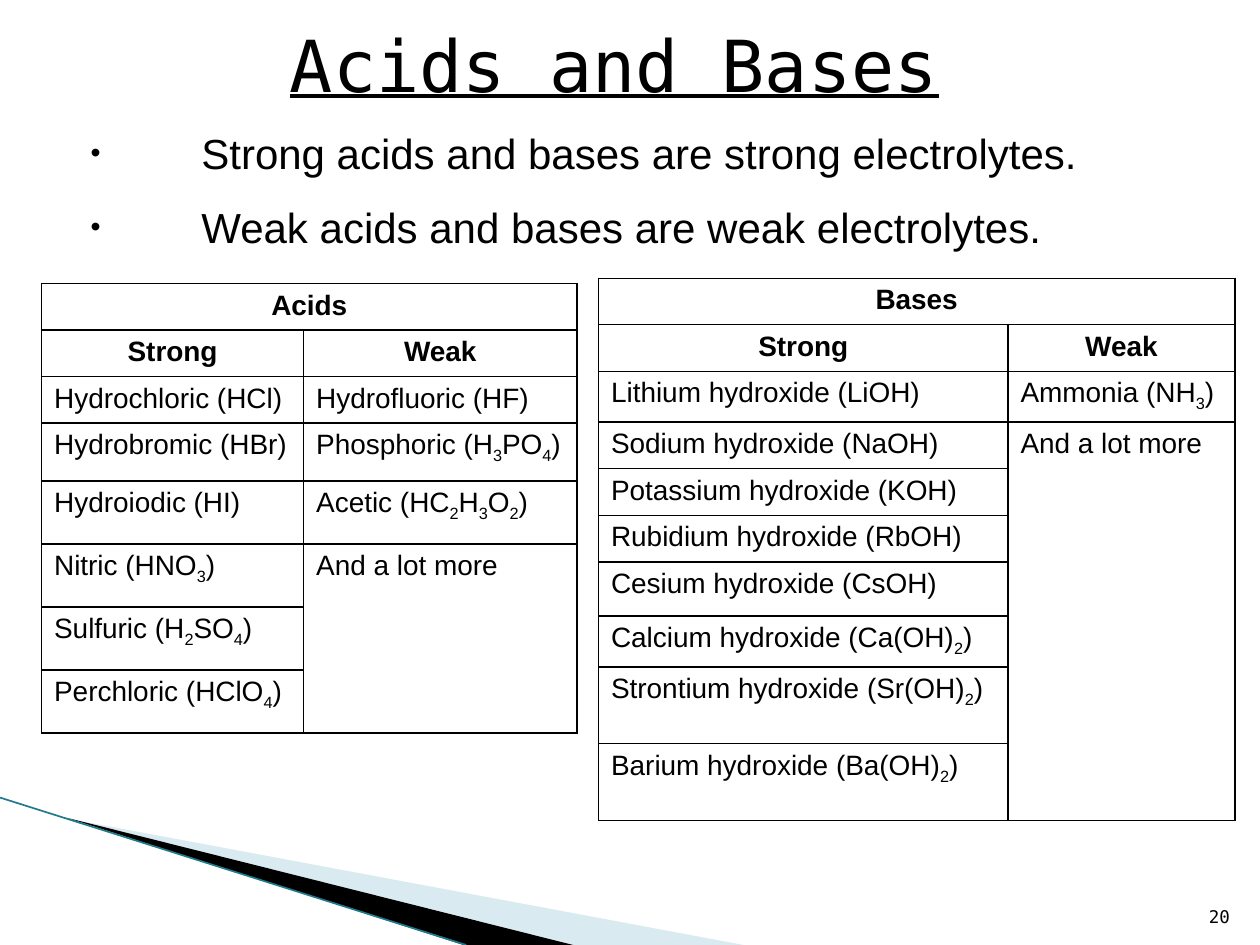
"""Build the Acids and Bases slide with its two classification tables."""
from itertools import groupby

from lxml import etree
from pptx import Presentation
from pptx import util as u
from pptx.dml.color import RGBColor
from pptx.enum import shapes, text
from pptx.oxml.ns import qn

COLORS = {"ink": "000000", "pale": "A0CBDC", "teal": "1F7A8C"}
SANS, MONO = "Arial", "DejaVu Sans Mono"
TITLE = "Acids and Bases"
POINTS = [
    "Strong acids and bases are strong electrolytes.",
    "Weak acids and bases are weak electrolytes.",
]
PAGE = "20"
MORE = "And a lot more"
TABLES = [
    {
        "heading": "Acids",
        "at": (0.33, 2.25),
        "cols": [2.08, 2.17],
        "rows": [0.37] * 3 + [0.46] + [0.5] * 4,
        "strong": ["Hydrochloric (HCl)", "Hydrobromic (HBr)", "Hydroiodic (HI)",
                   "Nitric (HNO3)", "Sulfuric (H2SO4)", "Perchloric (HClO4)"],
        "weak": ["Hydrofluoric (HF)", "Phosphoric (H3PO4)", "Acetic (HC2H3O2)", MORE],
    },
    {
        "heading": "Bases",
        "at": (4.75, 2.21),
        "cols": [3.25, 1.8],
        "rows": [0.35] + [0.37] * 5 + [0.43, 0.4, 0.61, 0.61],
        "strong": ["Lithium hydroxide (LiOH)", "Sodium hydroxide (NaOH)",
                   "Potassium hydroxide (KOH)", "Rubidium hydroxide (RbOH)",
                   "Cesium hydroxide (CsOH)", "Calcium hydroxide (Ca(OH)2)",
                   "Strontium hydroxide (Sr(OH)2)", "Barium hydroxide (Ba(OH)2)"],
        "weak": ["Ammonia (NH3)", MORE],
    },
]
WEDGES = [
    ("pale", 40, [(0.55, 6.5), (5.9, 7.5), (4.56, 7.5)]),
    ("ink", 100, [(0.53, 6.49), (4.55, 7.5), (3.68, 7.5)]),
]
EDGE = [(0, 6.33), (3.7, 7.5)]


def inches(values):
    return [u.Inches(value) for value in values]


def set_all(target, formats):
    for key, value in formats.items():
        setattr(target, key, value)


def style(font, size, name, **extra):
    set_all(font, {"size": u.Pt(size), "name": name, **extra})
    font.color.rgb = RGBColor.from_string(COLORS["ink"])


def add_wedge(slide, color, opacity, corners):
    start, *others = [inches(corner) for corner in corners]
    builder = slide.shapes.build_freeform(*start)
    builder.add_line_segments(others, close=True)
    wedge = builder.convert_to_shape()
    wedge.shadow.inherit = False
    wedge.line.fill.background()
    wedge.fill.solid()
    wedge.fill.fore_color.rgb = RGBColor.from_string(COLORS[color])
    if opacity < 100:
        tint = wedge.fill._xPr.find(".//" + qn("a:srgbClr"))
        etree.SubElement(tint, qn("a:alpha"), val=str(opacity * 1000))


def add_edge(slide, start, end):
    edge = slide.shapes.add_connector(
        shapes.MSO_CONNECTOR.STRAIGHT, *inches(start), *inches(end))
    edge.line.width = u.Pt(0.95)
    edge.line.color.rgb = RGBColor.from_string(COLORS["teal"])
    etree.SubElement(edge._element.spPr, qn("a:effectLst"))


def add_points(slide):
    frame = slide.shapes.add_textbox(*inches((0.5, 0.92, 8.25, 1.42))).text_frame
    set_all(frame, {"word_wrap": True, "margin_top": u.Inches(0.09)})
    for index, wording in enumerate(POINTS):
        point = frame.add_paragraph() if index else frame.paragraphs[0]
        properties = point._p.get_or_add_pPr()
        properties.set("marL", str(u.Inches(1)))
        properties.set("indent", str(-u.Inches(0.88)))
        etree.SubElement(properties, qn("a:buSzPct"), val="68000")
        etree.SubElement(properties, qn("a:buFont"), typeface=SANS)
        etree.SubElement(properties, qn("a:buChar"), char="•")
        point.space_before = u.Pt(13.5 if index else 0)
        run = point.add_run()
        run.text = wording
        style(run.font, 24, SANS)


def add_borders(cell):
    properties = cell._tc.get_or_add_tcPr()
    for index, side in enumerate("LRTB"):
        border = etree.Element(qn(f"a:ln{side}"), w=str(u.Pt(1)))
        fill = etree.SubElement(border, qn("a:solidFill"))
        etree.SubElement(fill, qn("a:srgbClr"), val=COLORS["ink"])
        properties.insert(index, border)


def write_cell(cell, wording, heading):
    paragraph = cell.text_frame.paragraphs[0]
    paragraph.alignment = text.PP_ALIGN.CENTER if heading else text.PP_ALIGN.LEFT
    style(paragraph.font, 16, SANS)
    for subscript, letters in groupby(wording, str.isdigit):
        run = paragraph.add_run()
        run.text = "".join(letters)
        style(run.font, 16, SANS, bold=heading)
        if subscript:
            run._r.get_or_add_rPr().set("baseline", "-25000")


def add_compounds(slide, group):
    cols, rows = inches(group["cols"]), inches(group["rows"])
    table = slide.shapes.add_table(
        len(rows), len(cols), *inches(group["at"]), sum(cols), sum(rows)).table
    set_all(table, {"first_row": False, "horz_banding": False})
    for column, width in zip(table.columns, cols):
        column.width = width
    for row, height in zip(table.rows, rows):
        row.height = height
    for c, entries in enumerate([
        [group["heading"], "Strong", *group["strong"]],
        ["", "Weak", *group["weak"]],
    ]):
        for r in range(len(rows)):
            cell = table.cell(r, c)
            add_borders(cell)
            cell.fill.background()
            write_cell(cell, entries[r] if r < len(entries) else "", r < 2)
    table.cell(0, 0).merge(table.cell(0, 1))
    table.cell(len(group["weak"]) + 1, 1).merge(table.cell(len(rows) - 1, 1))


def add_title(slide):
    title = slide.shapes.title
    set_all(title, dict(zip(("left", "top", "width", "height"),
                            inches((0.75, 0, 8.25, 1.02)))))
    title.text_frame.text = TITLE
    title.text_frame.vertical_anchor = text.MSO_ANCHOR.MIDDLE
    paragraph = title.text_frame.paragraphs[0]
    paragraph.alignment = text.PP_ALIGN.CENTER
    style(paragraph.runs[0].font, 41, MONO, underline=True)


def add_page(slide):
    frame = slide.shapes.add_textbox(*inches((9.46, 7.01, 0.4, 0.4))).text_frame
    set_all(frame, {"text": PAGE, "word_wrap": True,
                    "vertical_anchor": text.MSO_ANCHOR.BOTTOM})
    paragraph = frame.paragraphs[0]
    paragraph.alignment = text.PP_ALIGN.RIGHT
    style(paragraph.runs[0].font, 10, MONO)


def main():
    deck = Presentation()
    set_all(deck, {"slide_width": u.Inches(10), "slide_height": u.Inches(7.5)})
    slide = deck.slides.add_slide(deck.slide_layouts.get_by_name("Title Only"))
    for wedge in WEDGES:
        add_wedge(slide, *wedge)
    add_edge(slide, *EDGE)
    add_points(slide)
    add_page(slide)
    add_title(slide)
    for group in TABLES:
        add_compounds(slide, group)
    deck.save("out.pptx")


if __name__ == "__main__":
    main()
